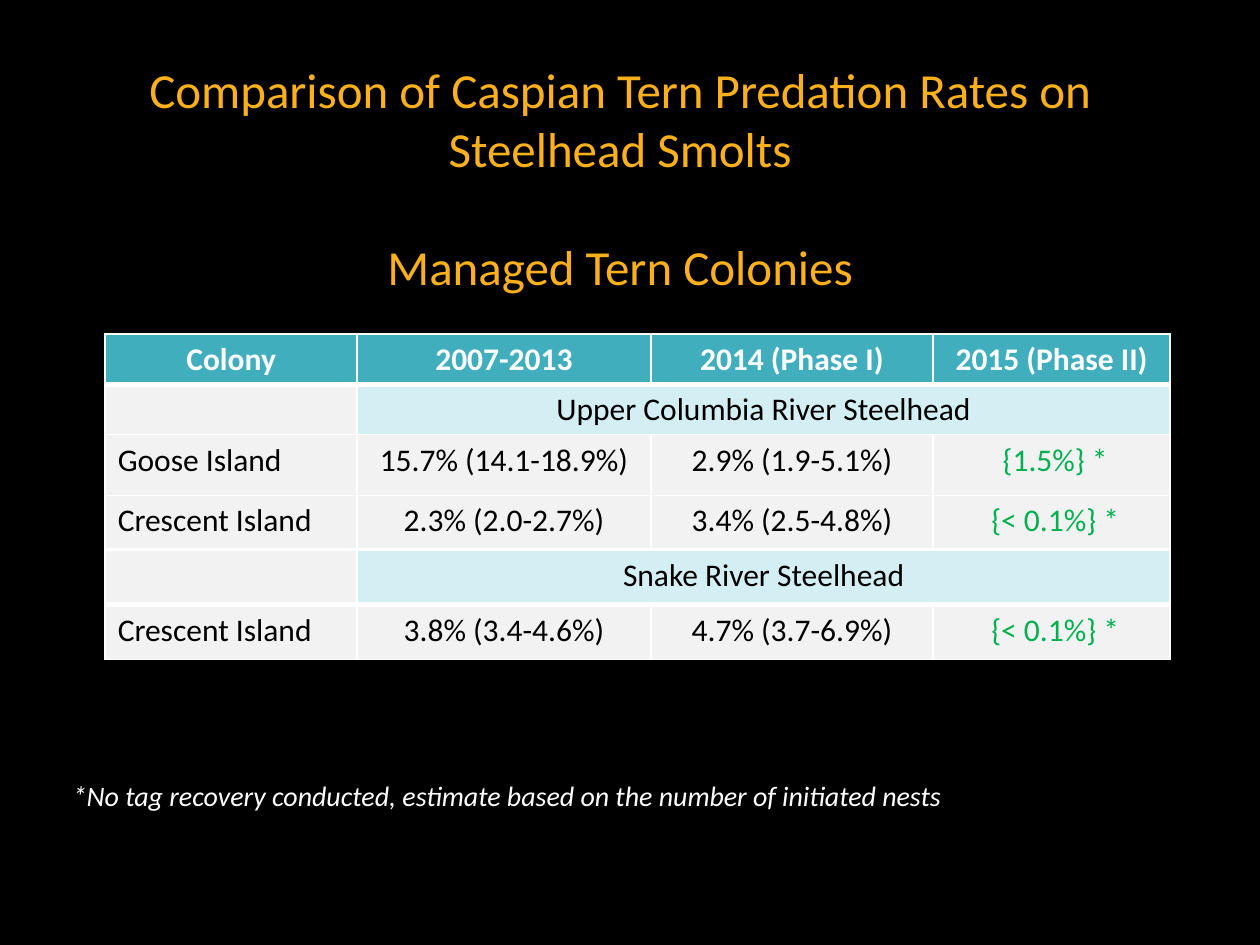
from dataclasses import dataclass

from lxml.etree import SubElement
from pptx import Presentation
from pptx.dml.color import RGBColor
from pptx.enum.text import PP_ALIGN as Align
from pptx.oxml.ns import qn
from pptx.util import Cm, Pt

BLACK = RGBColor(0x00, 0x00, 0x00)
WHITE = RGBColor(0xFF, 0xFF, 0xFF)
GOLD = RGBColor(0xFC, 0xB1, 0x1C)
TEAL = RGBColor(0x41, 0xAE, 0xBD)
PALE_TEAL = RGBColor(0xD4, 0xEF, 0xF4)
PALE_GREY = RGBColor(0xF2, 0xF2, 0xF2)
GREEN = RGBColor(0x00, 0xB0, 0x50)

FONT = "Calibri"
TABLE_LEFT = 2.12
TABLE_TOP = 6.73
COLUMN_WIDTHS = (5.08, 5.92, 5.69, 4.78)


@dataclass(frozen=True)
class TextStyle:
    size: float
    color: RGBColor
    bold: bool = False
    italic: bool = False


@dataclass(frozen=True)
class Row:
    height: float
    texts: tuple[str, ...]
    kind: str = "data"


TITLE = TextStyle(28, GOLD)
NOTE = TextStyle(16, WHITE, italic=True)
HEADER = TextStyle(18, WHITE, bold=True)
BODY = TextStyle(18, BLACK)
ESTIMATE = TextStyle(18, GREEN)

UPPER_COLUMBIA = (
    Row(1.01, ("Colony", "2007-2013", "2014 (Phase I)", "2015 (Phase II)"), "header"),
    Row(1.01, ("", "Upper Columbia River Steelhead"), "section"),
    Row(1.24, ("Goose Island", "15.7% (14.1-18.9%)", "2.9% (1.9-5.1%)", " {1.5%} *")),
)
CRESCENT = (
    Row(1.1, ("Crescent Island", "2.3% (2.0-2.7%)", "3.4% (2.5-4.8%)", " {< 0.1%} *")),
)
SNAKE = (
    Row(1.1, ("", "Snake River Steelhead"), "section"),
    Row(1.1, ("Crescent Island", "3.8% (3.4-4.6%)", "4.7% (3.7-6.9%)", " {< 0.1%} *")),
)


def add_span(para, text: str, style: TextStyle, align=Align.LEFT) -> None:
    """Add one styled run to an aligned paragraph."""
    para.alignment = align
    span = para.add_run()
    span.text = text
    font = span.font
    font.name, font.size = FONT, Pt(style.size)
    font.bold, font.italic = style.bold, style.italic
    font.color.rgb = style.color


def add_text(page, place: tuple, texts: tuple, style: TextStyle,
             align=Align.LEFT, gap: float = 0) -> None:
    """Add a wrapped text box with a gap between its paragraphs."""
    frame = page.shapes.add_textbox(*map(Cm, place)).text_frame
    frame.word_wrap = True
    for index, text in enumerate(texts):
        para = frame.add_paragraph() if index else frame.paragraphs[0]
        if index:
            para.space_before = Pt(gap)
        add_span(para, text, style, align)


def set_borders(cell, top: float, bottom: float) -> None:
    """Draw white borders around a cell, with widths in points."""
    properties = cell._tc.get_or_add_tcPr()
    for side, width in (("L", 1), ("R", 1), ("T", top), ("B", bottom)):
        line = SubElement(properties, qn(f"a:ln{side}"), w=str(Pt(width)))
        fill = SubElement(line, qn("a:solidFill"))
        SubElement(fill, qn("a:srgbClr"), val=str(WHITE))


def cell_look(kind: str, column: int) -> tuple:
    """Return the fill, text style and alignment of a cell."""
    if kind == "header":
        return TEAL, HEADER, Align.CENTER
    if kind == "section":
        return (PALE_TEAL if column else PALE_GREY), BODY, Align.CENTER
    style = ESTIMATE if column == len(COLUMN_WIDTHS) - 1 else BODY
    return PALE_GREY, style, Align.CENTER if column else Align.LEFT


def add_rates(page, top: float, rows: tuple[Row, ...]) -> None:
    """Add a table of predation rates with a thick line below its first row."""
    height = sum(row.height for row in rows)
    place = map(Cm, (TABLE_LEFT, top, sum(COLUMN_WIDTHS), height))
    table = page.shapes.add_table(len(rows), len(COLUMN_WIDTHS), *place).table
    table.first_row = table.horz_banding = False
    for column, width in zip(table.columns, COLUMN_WIDTHS):
        column.width = Cm(width)
    for index, row in enumerate(rows):
        table.rows[index].height = Cm(row.height)
        for number in range(len(COLUMN_WIDTHS)):
            cell = table.cell(index, number)
            color, style, align = cell_look(row.kind, number)
            set_borders(cell, 3 if index == 1 else 1, 1 if index else 3)
            cell.fill.solid()
            cell.fill.fore_color.rgb = color
            if number < len(row.texts) and row.texts[number]:
                add_span(cell.text_frame.paragraphs[0], row.texts[number], style, align)
        if row.kind == "section":
            table.cell(index, 1).merge(table.cell(index, len(COLUMN_WIDTHS) - 1))


def main() -> None:
    """Build the slide and save the deck."""
    deck = Presentation()
    deck.slide_width, deck.slide_height = Cm(25.4), Cm(19.05)
    page = deck.slides.add_slide(deck.slide_layouts[6])
    page.background.fill.solid()
    page.background.fill.fore_color.rgb = BLACK

    titles = ("Comparison of Caspian Tern Predation Rates on Steelhead Smolts",
              "Managed Tern Colonies")
    add_text(page, (1.17, 1.07, 22.66, 2.74), titles, TITLE, Align.CENTER, gap=34)
    top = TABLE_TOP
    for rows in (UPPER_COLUMBIA, CRESCENT, SNAKE):
        add_rates(page, top, rows)
        top += sum(row.height for row in rows)
    note = "*No tag recovery conducted, estimate based on the number of initiated nests"
    add_text(page, (1.22, 15.57, 23.8, 0.94), (note,), NOTE)
    deck.save("out.pptx")


if __name__ == "__main__":
    main()
